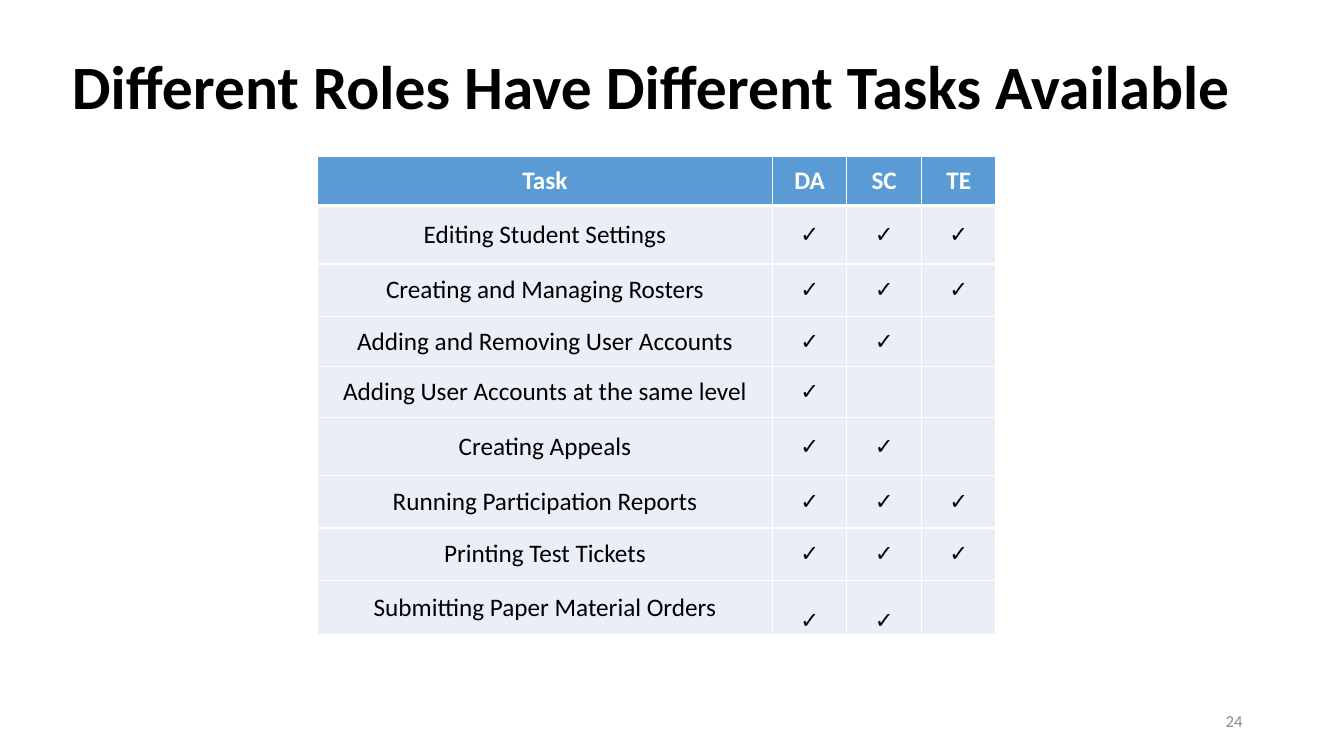
from lxml import etree
from pptx import Presentation
from pptx.dml.color import RGBColor
from pptx.enum.text import MSO_ANCHOR, PP_ALIGN
from pptx.oxml.ns import qn
from pptx.util import Inches, Pt

MIDDLE, BOTTOM = MSO_ANCHOR.MIDDLE, MSO_ANCHOR.BOTTOM
LEFT, CENTER, RIGHT = PP_ALIGN.LEFT, PP_ALIGN.CENTER, PP_ALIGN.RIGHT
FONT = "Calibri"
WIDE, HIGH = Inches(13.33), Inches(7.5)
COLORS = {
    "ink": "000000",
    "white": "FFFFFF",
    "head": "5B9BD5",
    "body": "EAEFF7",
    "number": "8C8C8C",
}
ROLES = ["DA", "SC", "TE"]
TASKS = [
    ("Editing Student Settings", 3),
    ("Creating and Managing Rosters", 3),
    ("Adding and Removing User Accounts", 2),
    ("Adding User Accounts at the same level", 1),
    ("Creating Appeals", 2),
    ("Running Participation Reports", 3),
    ("Printing Test Tickets", 3),
    ("Submitting Paper Material Orders", 2),
]
COLS = [4.51] + [0.74] * len(ROLES)
ROWS = [0.49, 0.58, 0.52, 0.5, 0.5, 0.58, 0.52, 0.52, 0.54]


def place(shape, left, top, width, height):
    """Set a shape's box as shares of the slide."""
    shape.left, shape.width = int(left * WIDE), int(width * WIDE)
    shape.top, shape.height = int(top * HIGH), int(height * HIGH)


def write(frame, text, size, color, align, bold=False):
    """Put one styled paragraph into a text frame."""
    para = frame.paragraphs[0]
    para.text = text
    para.alignment = align
    para.font.name = FONT
    para.font.size = Pt(size)
    para.font.bold = bold
    para.font.color.rgb = RGBColor.from_string(COLORS[color])
    return para


def border(cell, side, points):
    """Draw a white line on one side of a cell."""
    props = cell._tc.get_or_add_tcPr()
    line = etree.SubElement(props, qn("a:ln" + side), w=str(Pt(points)))
    fill = etree.SubElement(line, qn("a:solidFill"))
    etree.SubElement(fill, qn("a:srgbClr"), val=COLORS["white"])


def style(cell, fill, below, above):
    """Set a cell's borders, fill, margins and anchor."""
    for side, points in zip("LRTB", (1, 1, above, below)):
        border(cell, side, points)
    cell.fill.solid()
    cell.fill.fore_color.rgb = RGBColor.from_string(COLORS[fill])
    cell.margin_left = cell.margin_right = 0
    cell.margin_top = cell.margin_bottom = 0
    cell.vertical_anchor = MIDDLE


def add_title(slide, text):
    """Fill the title placeholder."""
    title = slide.shapes.title
    place(title, 0.046, 0.053, 0.886, 0.132)
    title.text_frame.vertical_anchor = MIDDLE
    write(title.text_frame, text, 44, "ink", LEFT, True).line_spacing = 0.9


def add_number(slide, text):
    """Add the slide number at the lower right."""
    box = slide.shapes.add_textbox(0, 0, 0, 0)
    place(box, 0.707, 0.927, 0.225, 0.053)
    box.text_frame.word_wrap = True
    box.text_frame.vertical_anchor = MIDDLE
    write(box.text_frame, text, 12, "number", RIGHT)


def add_grid(slide):
    """Add the table of tasks and the roles that may do them."""
    grid = slide.shapes.add_table(
        len(ROWS), len(COLS), Inches(3.15), Inches(1.55),
        Inches(sum(COLS)), Inches(sum(ROWS))).table
    grid.horz_banding = False
    for col, width in zip(grid.columns, COLS):
        col.width = Inches(width)
    for row, height in zip(grid.rows, ROWS):
        row.height = Inches(height)
    for col, text in enumerate(["Task"] + ROLES):
        cell = grid.cell(0, col)
        style(cell, "head", 3, 1)
        write(cell.text_frame, text, 18, "white", CENTER, True)
    for row, (task, count) in enumerate(TASKS, 1):
        for col in range(len(COLS)):
            cell = grid.cell(row, col)
            style(cell, "body", 1, 3 if row == 1 else 1)
            if col == 0:
                write(cell.text_frame, task, 18, "ink", CENTER)
            elif col <= count:
                write(cell.text_frame, "✓", 16, "ink", CENTER)
                if row == len(TASKS):
                    cell.vertical_anchor = BOTTOM


def main():
    """Build and save the slide."""
    deck = Presentation()
    deck.slide_width, deck.slide_height = WIDE, HIGH
    slide = deck.slides.add_slide(deck.slide_layouts[5])
    add_title(slide, "Different Roles Have Different Tasks Available")
    add_number(slide, "24")
    add_grid(slide)
    deck.save("out.pptx")


if __name__ == "__main__":
    main()
